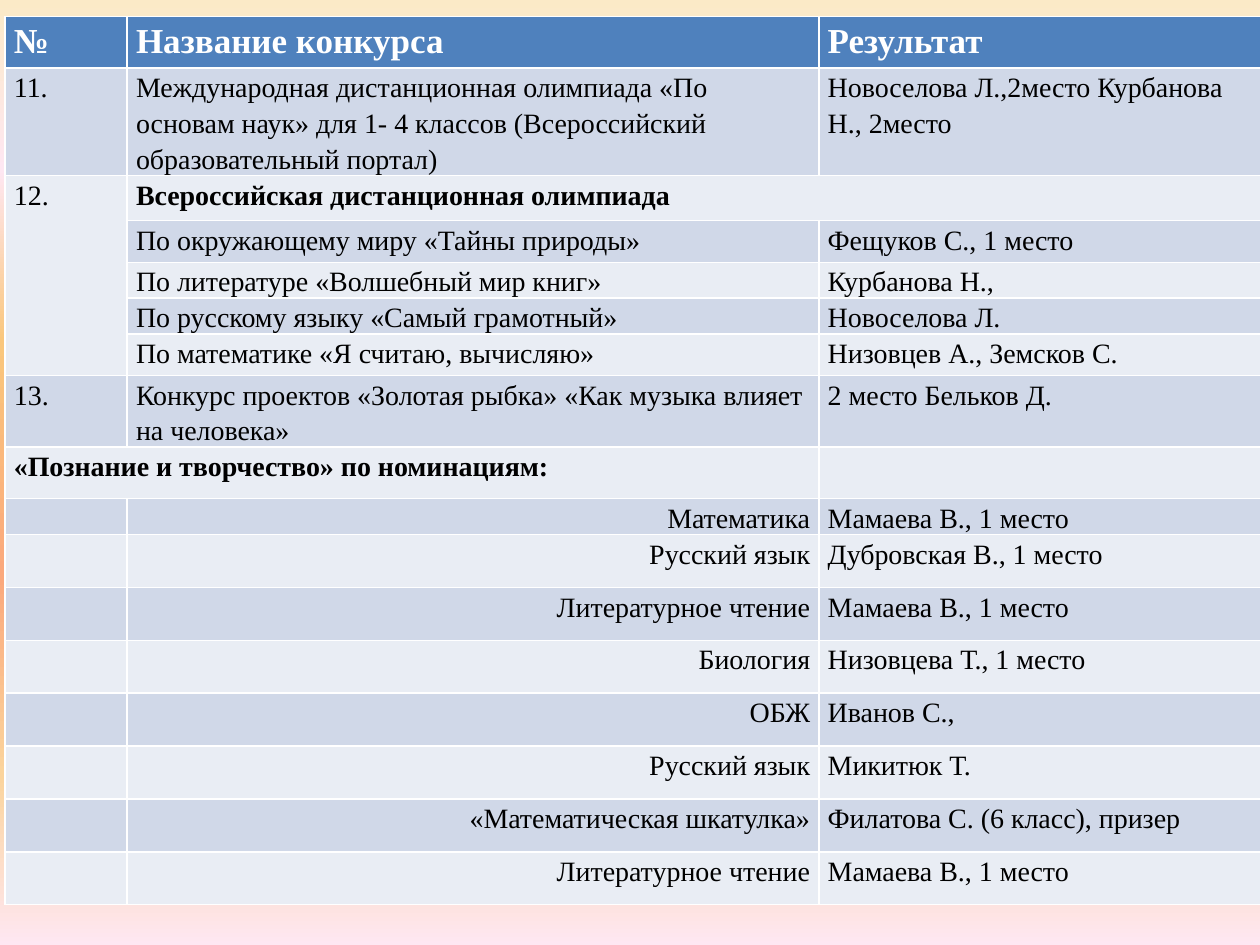
import pptx
import pptx.util
import pptx.dml.color
import pptx.enum.text
import pptx.oxml.ns
import lxml.etree

Inches = pptx.util.Inches
Pt = pptx.util.Pt
qn = pptx.oxml.ns.qn

FONT = "Times New Roman"
HEADER_FILL = "4F81BD"
BAND_FILLS = ["E9EDF4", "D0D8E8"]
GRADIENT = [(0, "FBEAC7"), (18, "FEE7F2"), (36, "FAC77D"),
            (61, "FBA97D"), (82, "FBD49C"), (100, "FEE7F2")]

COLUMN_WIDTHS = [0.97, 5.49, 3.51]
ROW_HEIGHTS = [0.41, 0.8, 0.36, 0.33, 0.26, 0.26, 0.33, 0.52, 0.41, 0.28] + [0.42] * 7
GROUP_ROW, GROUP_END, NOMINATION_ROW = 2, 6, 8

ROWS = [
    ("№", "Название конкурса", "Результат"),
    ("11.", "Международная дистанционная олимпиада «По основам наук» для 1- 4 классов "
            "(Всероссийский образовательный портал)",
     "Новоселова Л.,2место Курбанова Н., 2место"),
    ("12.", "Всероссийская дистанционная олимпиада", ""),
    ("", "По окружающему миру «Тайны природы»", "Фещуков С., 1 место"),
    ("", "По литературе «Волшебный мир книг»", "Курбанова Н.,"),
    ("", "По русскому языку «Самый грамотный»", "Новоселова Л."),
    ("", "По математике «Я считаю, вычисляю»", "Низовцев А., Земсков С."),
    ("13.", "Конкурс проектов «Золотая рыбка» «Как музыка влияет на человека»",
     "2 место Бельков Д."),
    ("«Познание и творчество» по номинациям:", "", ""),
    ("", "Математика", "Мамаева В., 1 место"),
    ("", "Русский язык", "Дубровская В., 1 место"),
    ("", "Литературное чтение", "Мамаева В., 1 место"),
    ("", "Биология", "Низовцева Т., 1 место"),
    ("", "ОБЖ", "Иванов С.,"),
    ("", "Русский язык", "Микитюк Т."),
    ("", "«Математическая шкатулка»", "Филатова С. (6 класс), призер"),
    ("", "Литературное чтение", "Мамаева В., 1 место"),
]


def color(value):
    return pptx.dml.color.RGBColor.from_string(value)


def paint_background(page):
    fill = page.background.fill
    fill.gradient()
    fill.gradient_angle = 270  # counter-clockwise, so top to bottom
    # Replace the two preset stops with the full list
    stops = page.background._cSld.find(".//" + qn("a:gsLst"))
    for stop in list(stops):
        stops.remove(stop)
    for position, value in GRADIENT:
        stop = lxml.etree.SubElement(stops, qn("a:gs"), pos=str(position * 1000))
        lxml.etree.SubElement(stop, qn("a:srgbClr"), val=value)


def format_cell(cell, text, row, column):
    header = row == 0
    heading = header or row in (GROUP_ROW, NOMINATION_ROW) and not text.endswith(".")
    size = 20 if header else 16
    cell.fill.solid()
    cell.fill.fore_color.rgb = color(HEADER_FILL if header else BAND_FILLS[row % 2])
    cell.margin_left = cell.margin_right = Inches(0.07)
    cell.margin_top = cell.margin_bottom = 0

    para = cell.text_frame.paragraphs[0]
    para.text = text
    para.line_spacing = 1.15
    if column > 0 and not heading:
        para.space_after = Pt(10)
    if column == 1 and row > NOMINATION_ROW:
        para.alignment = pptx.enum.text.PP_ALIGN.RIGHT
    for span in para.runs:
        span.font.name = FONT
        span.font.size = Pt(size)
        span.font.bold = heading
        span.font.color.rgb = color("FFFFFF" if header else "000000")
    if not text:  # keeps empty cells from stretching their row
        lxml.etree.SubElement(para._p, qn("a:endParaRPr"), sz=str(size * 100))


def add_results_table(page, left, top, width, height):
    frame = page.shapes.add_table(len(ROWS), len(COLUMN_WIDTHS), left, top, width, height)
    table = frame.table
    for column, size in zip(table.columns, COLUMN_WIDTHS):
        column.width = Inches(size)
    for row, size in zip(table.rows, ROW_HEIGHTS):
        row.height = Inches(size)
    for row, texts in enumerate(ROWS):
        for column, text in enumerate(texts):
            format_cell(table.cell(row, column), text, row, column)

    # Group number, group heading and nomination heading
    table.cell(GROUP_ROW, 0).merge(table.cell(GROUP_END, 0))
    table.cell(GROUP_ROW, 1).merge(table.cell(GROUP_ROW, 2))
    table.cell(NOMINATION_ROW, 0).merge(table.cell(NOMINATION_ROW, 1))


def main():
    deck = pptx.Presentation()
    deck.slide_width, deck.slide_height = Inches(10), Inches(7.5)
    page = deck.slides.add_slide(deck.slide_layouts[6])
    paint_background(page)
    add_results_table(page, Inches(0.04), Inches(0.13),
                      Inches(sum(COLUMN_WIDTHS)), Inches(sum(ROW_HEIGHTS)))
    deck.save("out.pptx")


if __name__ == "__main__":
    main()
